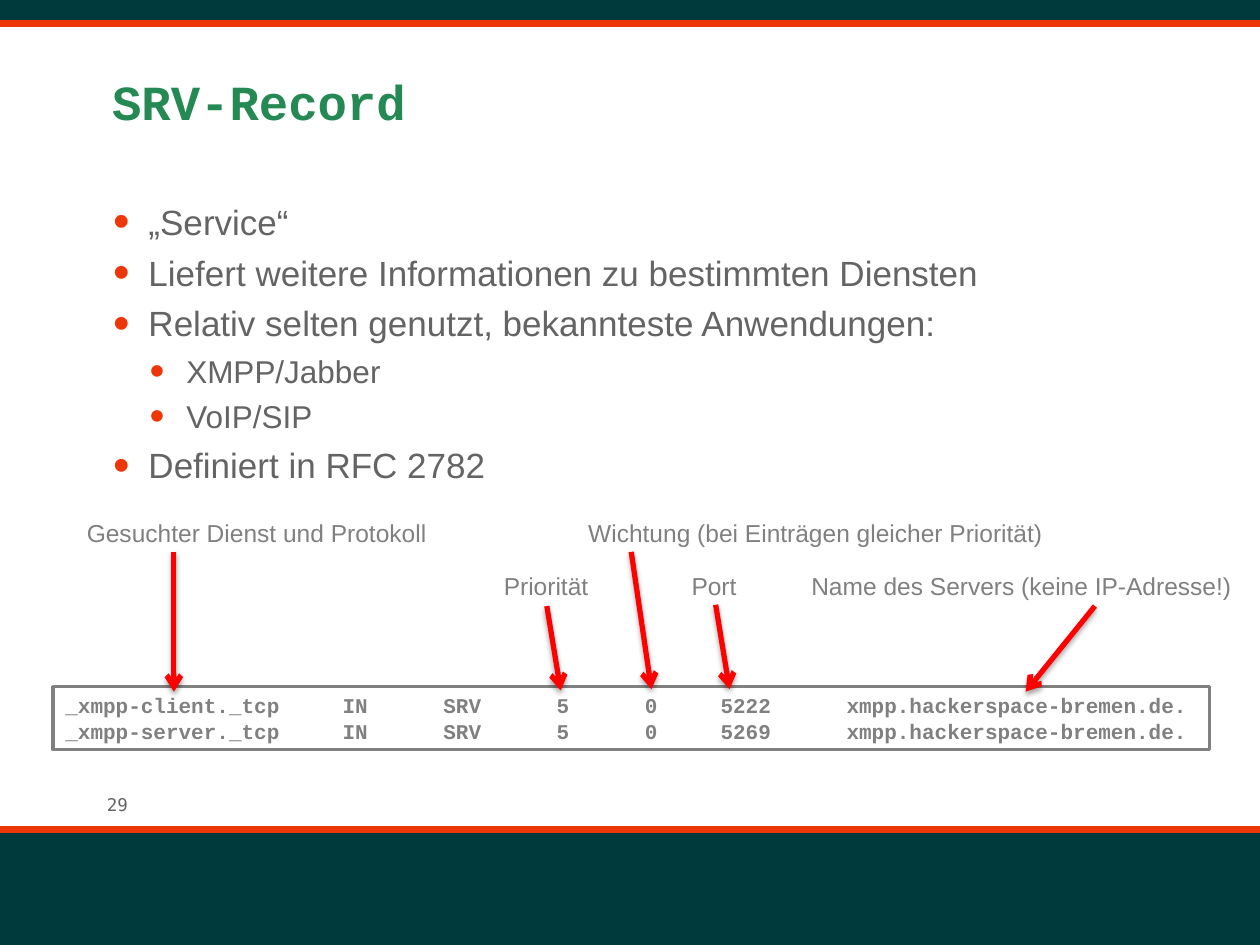
from lxml import etree
from pptx import Presentation
from pptx.dml.color import RGBColor
from pptx.enum import shapes, text
from pptx.oxml import parse_xml
from pptx.util import Inches, Pt

NS = "http://schemas.openxmlformats.org/drawingml/2006/main"
THEME = {
    "dark": "003A3D", "accent": "EE3709", "title": "258954", "body": "646464",
    "grey": "808080", "arrow": "FF0000", "white": "FFFFFF",
    "sans": "Arial", "code": "Courier New", "mono": "DejaVu Sans Mono",
    "head": 28, "levels": (20, 18), "label": 14, "record": 12, "page": 10,
}

# Content
TITLE = "SRV-Record"
PAGE = "29"
BULLETS = [
    (0, "„Service“"),
    (0, "Liefert weitere Informationen zu bestimmten Diensten"),
    (0, "Relativ selten genutzt, bekannteste Anwendungen:"),
    (1, "XMPP/Jabber"),
    (1, "VoIP/SIP"),
    (0, "Definiert in RFC 2782"),
]
RECORDS = [
    ("_xmpp-client._tcp", "IN", "SRV", "5", "0", "5222", "xmpp.hackerspace-bremen.de."),
    ("_xmpp-server._tcp", "IN", "SRV", "5", "0", "5269", "xmpp.hackerspace-bremen.de."),
]
COLUMNS = (22, 30, 39, 46, 52, 62)  # starts of fields, in characters
CHAR = 0.1  # width of one 12 pt character
ROWS = (4.06, 4.48)  # tops of the two label rows
# text, row, left, width, arrow start, arrow end
LABELS = [
    ("Gesuchter Dienst und Protokoll", 0, 0.59, 2.91, (1.38, 4.38), (1.38, 5.49)),
    ("Name des Servers (keine IP-Adresse!)", 1, 6.34, 3.55, (8.69, 4.81), (8.14, 5.49)),
    ("Priorität", 1, 3.9, 0.88, (4.34, 4.81), (4.45, 5.48)),
    ("Wichtung (bei Einträgen gleicher Priorität)", 0, 4.57, 3.83, (5.01, 4.38), (5.17, 5.47)),
    ("Port", 1, 5.39, 0.56, (5.68, 4.8), (5.79, 5.47)),
]
BARS = [(6.58, 0.92, 6.58), (0, 0.17, 0.19)]  # top, height, line height
LEVELS = [(0.29, -0.28, 5), (0.59, -0.29, 4.5)]  # margin, indent, space before


def color(name):
    return RGBColor.from_string(THEME[name])


def write(par, words, size, face, tint, bold=False):
    run = par.add_run()
    run.text = words
    font = run.font
    font.size, font.name, font.bold = Pt(size), face, bold
    font.color.rgb = color(tint)


def box(slide, left, top, width, height, wrap=True):
    shape = slide.shapes.add_textbox(*map(Inches, (left, top, width, height)))
    shape.text_frame.word_wrap = wrap
    return shape.text_frame


def rect(slide, left, top, width, height, fill, edge, weight):
    shape = slide.shapes.add_shape(
        shapes.MSO_SHAPE.RECTANGLE, *map(Inches, (left, top, width, height)))
    shape.shadow.inherit = False
    shape.fill.solid()
    shape.fill.fore_color.rgb = color(fill)
    shape.line.color.rgb = color(edge)
    shape.line.width = Pt(weight)
    return shape.text_frame


def line(slide, start, end, tint, weight):
    link = slide.shapes.add_connector(
        shapes.MSO_CONNECTOR.STRAIGHT, *map(Inches, start + end))
    link.line.color.rgb = color(tint)
    link.line.width = Pt(weight)
    effects = etree.SubElement(link._element.spPr, f"{{{NS}}}effectLst")
    return link, effects


def arrow(slide, start, end):
    link, effects = line(slide, start, end, "arrow", 3)
    ln = link.line._get_or_add_ln()
    etree.SubElement(ln, f"{{{NS}}}tailEnd", type="arrow")
    effects.append(parse_xml(
        f'<a:outerShdw xmlns:a="{NS}" blurRad="{Pt(3.1)}" dist="{Pt(1.8)}" '
        'dir="5400000" rotWithShape="0"><a:srgbClr val="000000">'
        '<a:alpha val="35000"/></a:srgbClr></a:outerShdw>'))


def bullet(par, level):
    margin, indent, gap = LEVELS[level]
    par.level = level
    props = par._p.get_or_add_pPr()
    props.set("marL", str(Inches(margin)))
    props.set("indent", str(Inches(indent)))
    tint = etree.SubElement(props, f"{{{NS}}}buClr")
    etree.SubElement(tint, f"{{{NS}}}srgbClr", val=THEME["accent"])
    etree.SubElement(props, f"{{{NS}}}buSzPct", val="135000")
    etree.SubElement(props, f"{{{NS}}}buFont", typeface=THEME["sans"])
    etree.SubElement(props, f"{{{NS}}}buChar", char="•")
    return Pt(gap)


def paragraphs(frame, items):
    for n, item in enumerate(items):
        yield n, frame.paragraphs[0] if n == 0 else frame.add_paragraph(), item


def main():
    deck = Presentation()
    deck.slide_width, deck.slide_height = Inches(10), Inches(7.5)
    slide = deck.slides.add_slide(deck.slide_layouts[5])

    # Page number and bars
    page = box(slide, 0.75, 6.25, 2.92, 0.27)
    write(page.paragraphs[0], PAGE, THEME["page"], THEME["mono"], "body")
    for top, height, edge in BARS:
        rect(slide, 0, top, 10, height, "dark", "dark", 0.75)
        line(slide, (0, edge), (10, edge), "accent", 4)

    # Title
    title = slide.shapes.title
    title.left, title.top, title.width, title.height = map(Inches, (0.79, 0.43, 8.5, 0.99))
    frame = title.text_frame
    frame.auto_size = text.MSO_AUTO_SIZE.NONE
    frame.vertical_anchor = text.MSO_ANCHOR.TOP
    frame.margin_top = Inches(0.14)
    frame.paragraphs[0].alignment = text.PP_ALIGN.LEFT
    write(frame.paragraphs[0], TITLE, THEME["head"], THEME["code"], "title", True)

    # Bullets
    body = box(slide, 0.79, 1.51, 8.5, 4.74)
    body.margin_top = Inches(0.08)
    for n, par, (level, words) in paragraphs(body, BULLETS):
        gap = bullet(par, level)
        if n:
            par.space_before = gap
        write(par, words, THEME["levels"][level], THEME["sans"], "body")

    # Records, with one tab stop per field
    zone = rect(slide, 0.42, 5.45, 9.18, 0.5, "white", "grey", 2)
    zone.word_wrap = True
    for n, par, fields in paragraphs(zone, RECORDS):
        par.alignment = text.PP_ALIGN.LEFT
        tabs = etree.SubElement(par._p.get_or_add_pPr(), f"{{{NS}}}tabLst")
        for col in COLUMNS:
            etree.SubElement(tabs, f"{{{NS}}}tab", pos=str(Inches(col * CHAR)), algn="l")
        write(par, "\t".join(fields), THEME["record"], THEME["code"], "grey", True)

    # Labels and arrows
    for words, row, left, width, start, end in LABELS:
        label = box(slide, left, ROWS[row], width, 0.34, wrap=False)
        label.auto_size = text.MSO_AUTO_SIZE.SHAPE_TO_FIT_TEXT
        write(label.paragraphs[0], words, THEME["label"], THEME["sans"], "grey")
        arrow(slide, start, end)

    deck.save("out.pptx")


if __name__ == "__main__":
    main()
